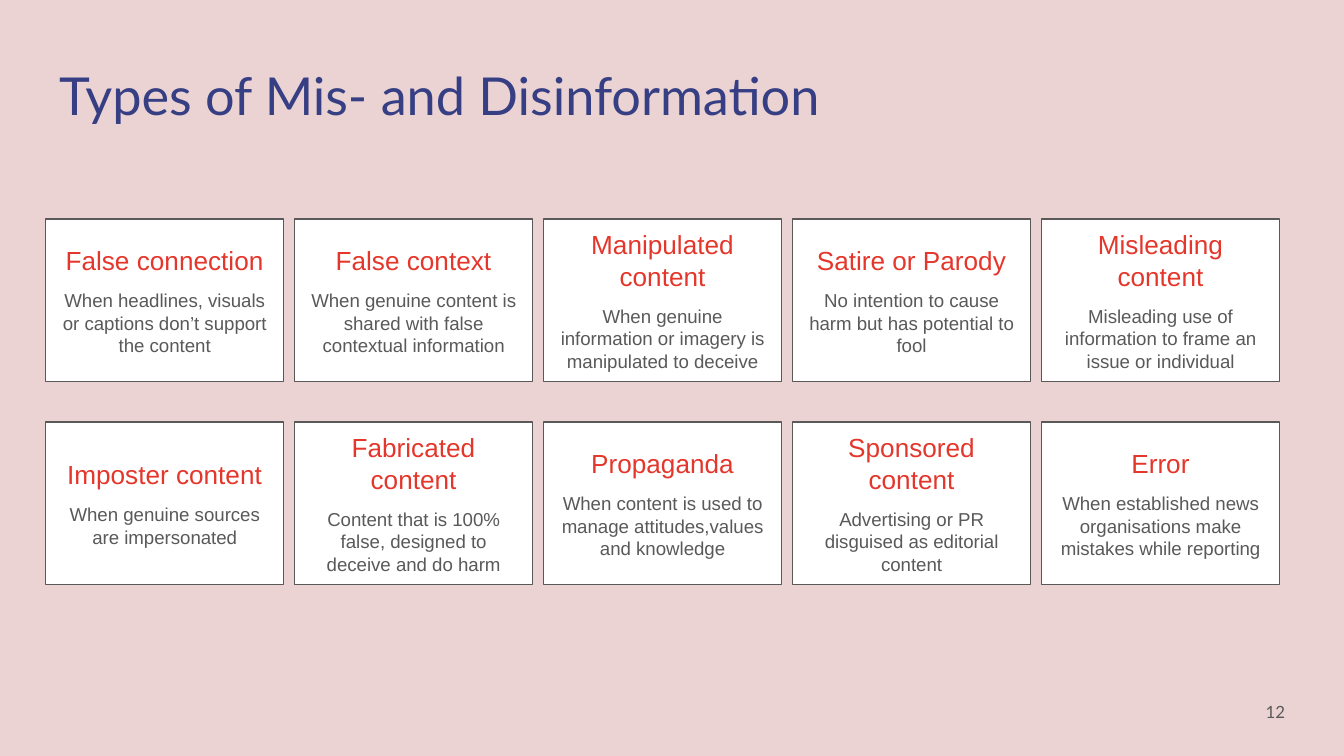
from dataclasses import dataclass

from pptx import Presentation
from pptx.dml.color import RGBColor
from pptx.enum.shapes import MSO_SHAPE
from pptx.enum.text import MSO_ANCHOR, MSO_AUTO_SIZE, PP_ALIGN
from pptx.util import Inches, Pt

RECTANGLE = MSO_SHAPE.RECTANGLE
TOP, MIDDLE = MSO_ANCHOR.TOP, MSO_ANCHOR.MIDDLE
LEFT, CENTER, RIGHT = PP_ALIGN.LEFT, PP_ALIGN.CENTER, PP_ALIGN.RIGHT
NO_AUTOFIT = MSO_AUTO_SIZE.NONE


@dataclass(frozen=True)
class Theme:
    background: RGBColor = RGBColor(0xEB, 0xD3, 0xD3)
    title: RGBColor = RGBColor(0x36, 0x3F, 0x83)
    heading: RGBColor = RGBColor(0xE5, 0x36, 0x2B)
    body: RGBColor = RGBColor(0x59, 0x59, 0x59)
    card: RGBColor = RGBColor(0xFF, 0xFF, 0xFF)
    title_font: str = "Lato"
    card_font: str = "Arial"
    title_size: int = 28
    heading_size: int = 14
    body_size: int = 10
    number_size: int = 9


THEME = Theme()

CARD_ROWS = [
    [
        ("False connection", "When headlines, visuals or captions don’t support the content"),
        ("False context", "When genuine content is shared with false contextual information"),
        ("Manipulated content", "When genuine information or imagery is manipulated to deceive"),
        ("Satire or Parody", "No intention to cause harm but has potential to fool"),
        ("Misleading content", "Misleading use of information to frame an issue or individual"),
    ],
    [
        ("Imposter content", "When genuine sources are impersonated"),
        ("Fabricated content", "Content that is 100% false, designed to deceive and do harm"),
        ("Propaganda", "When content is used to manage attitudes,values and knowledge"),
        ("Sponsored content", "Advertising or PR disguised as editorial content"),
        ("Error", "When established news organisations make mistakes while reporting"),
    ],
]


def prepare_frame(shape, anchor):
    frame = shape.text_frame
    frame.word_wrap = True
    frame.auto_size = NO_AUTOFIT
    frame.vertical_anchor = anchor
    frame.margin_left = frame.margin_right = Inches(0.1)
    frame.margin_top = frame.margin_bottom = Inches(0.1)
    return frame


def write(para, text, font, size, color, align):
    para.alignment = align
    span = para.add_run()
    span.text = text
    span.font.name = font
    span.font.size = Pt(size)
    span.font.color.rgb = color


def place_title(page, left, top, width, height):
    title = page.shapes.title
    title.left, title.top, title.width, title.height = left, top, width, height
    frame = prepare_frame(title, TOP)
    write(frame.paragraphs[0], "Types of Mis- and Disinformation",
          THEME.title_font, THEME.title_size, THEME.title, LEFT)


def add_page_number(page, left, top, width, height):
    box = page.shapes.add_textbox(left, top, width, height)
    frame = prepare_frame(box, MIDDLE)
    write(frame.paragraphs[0], "12",
          THEME.title_font, THEME.number_size, THEME.body, RIGHT)


def add_card(page, left, top, width, height, heading, description):
    card = page.shapes.add_shape(RECTANGLE, left, top, width, height)
    card.shadow.inherit = False
    card.fill.solid()
    card.fill.fore_color.rgb = THEME.card
    card.line.color.rgb = THEME.body
    card.line.width = Pt(0.75)
    frame = prepare_frame(card, MIDDLE)
    para = frame.paragraphs[0]
    para.space_after = Pt(7)
    write(para, heading, THEME.card_font, THEME.heading_size, THEME.heading, CENTER)
    write(frame.add_paragraph(), description,
          THEME.card_font, THEME.body_size, THEME.body, CENTER)


def add_card_grid(page, left, top, width, height):
    card_width, card_height = Inches(1.77), Inches(1.21)
    # Spread the cards evenly from edge to edge of the grid
    column_step = (width - card_width) / (len(CARD_ROWS[0]) - 1)
    row_step = (height - card_height) / (len(CARD_ROWS) - 1)
    for row, cards in enumerate(CARD_ROWS):
        for column, (heading, description) in enumerate(cards):
            add_card(page, left + round(column * column_step),
                     top + round(row * row_step),
                     card_width, card_height, heading, description)


def main():
    deck = Presentation()
    # Widescreen page, 16 by 9
    deck.slide_width = Inches(10)
    deck.slide_height = deck.slide_width * 9 // 16
    page = deck.slides.add_slide(deck.slide_layouts[5])  # Title Only
    page.background.fill.solid()
    page.background.fill.fore_color.rgb = THEME.background

    place_title(page, Inches(0.34), Inches(0.37), Inches(7.44), Inches(0.63))
    add_page_number(page, Inches(9.06), Inches(5.08), Inches(0.6), Inches(0.43))
    add_card_grid(page, Inches(0.34), Inches(1.63), Inches(9.18), Inches(2.72))
    deck.save("out.pptx")


if __name__ == "__main__":
    main()
